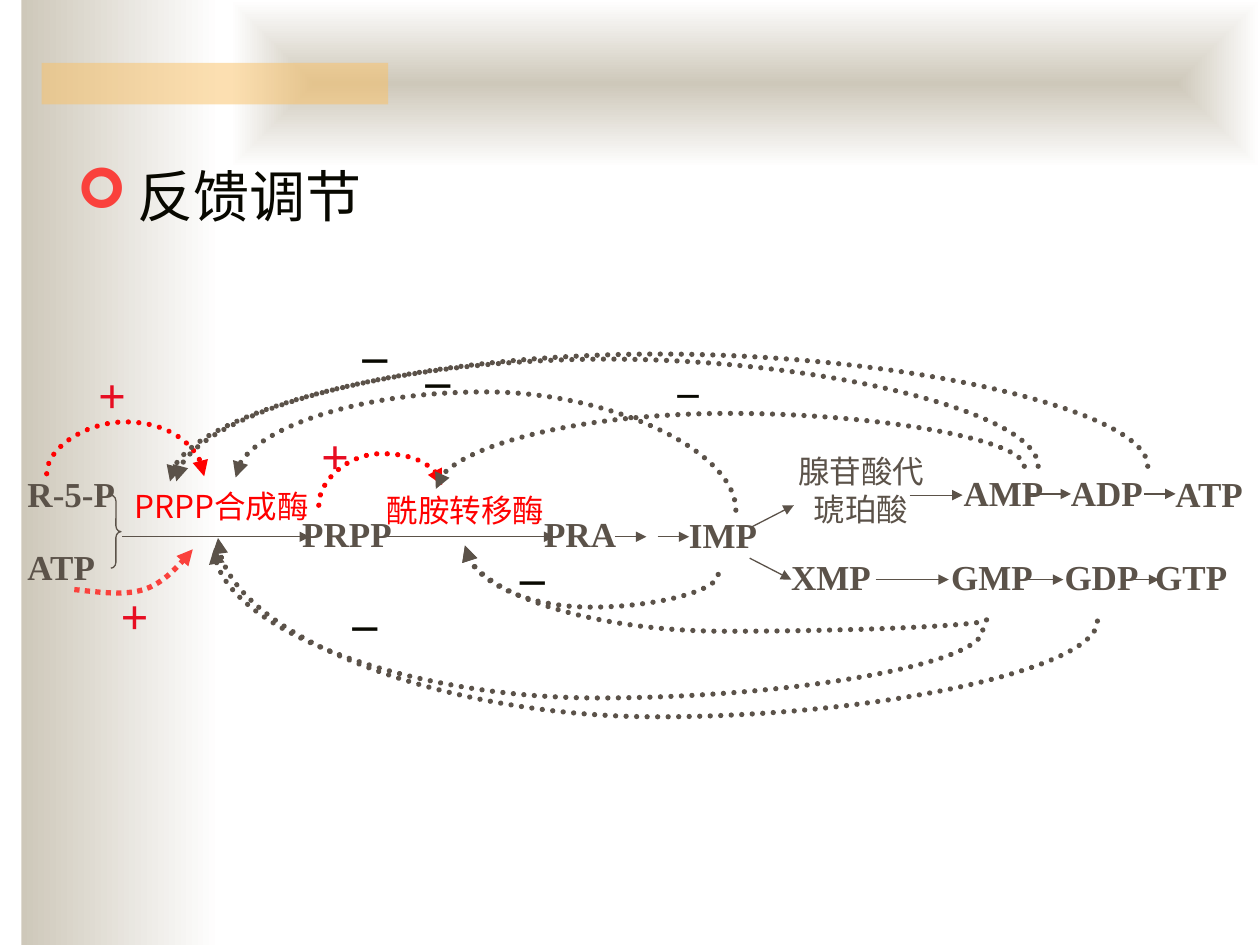
import pptx
import pptx.util
from lxml import etree
from pptx.dml.color import RGBColor
from pptx.enum.dml import MSO_LINE
from pptx.enum.shapes import MSO_CONNECTOR, MSO_SHAPE
from pptx.enum.text import MSO_ANCHOR, MSO_AUTO_SIZE, PP_ALIGN
from pptx.oxml.ns import qn
from pptx.util import Inches

BEIGE = RGBColor(0xCE, 0xC8, 0xBA)
WHITE = RGBColor(0xFF, 0xFF, 0xFF)
ORANGE = RGBColor(0xFA, 0xC1, 0x64)
BROWN = RGBColor(0x5B, 0x52, 0x49)
RED = RGBColor(0xFF, 0x00, 0x00)
SIGN_RED = RGBColor(0xE7, 0x0D, 0x22)
CORAL = RGBColor(0xFA, 0x41, 0x3C)
BLACK = RGBColor(0x08, 0x08, 0x00)
SERIF = "Times New Roman"
SANS = "Noto Sans CJK SC"


def write_text(shape, text, size, font_name, color, bold=False, wrap=False, align=PP_ALIGN.LEFT):
    frame = shape.text_frame
    frame.text = text
    frame.word_wrap = wrap
    frame.auto_size = MSO_AUTO_SIZE.SHAPE_TO_FIT_TEXT
    frame.vertical_anchor = MSO_ANCHOR.TOP
    for paragraph in frame.paragraphs:
        paragraph.alignment = align
        for run in paragraph.runs:
            run.font.size = pptx.util.Pt(size)
            run.font.bold = bold
            run.font.color.rgb = color
            run.font.name = font_name
            east_asian = etree.SubElement(run.font._element, qn("a:ea"))
            east_asian.set("typeface", font_name)


def style_arrow(shape, color, width, dotted=False, round_cap=False):
    """Set the line, its arrowhead and an empty effect list."""
    shape.line.color.rgb = color
    shape.line.width = pptx.util.Pt(width)
    if dotted:
        shape.line.dash_style = MSO_LINE.ROUND_DOT
    properties = shape._element.spPr
    line = properties.find(qn("a:ln"))
    if round_cap:
        line.set("cap", "rnd")
    etree.SubElement(line, qn("a:tailEnd")).set("type", "triangle")
    if properties.find(qn("a:effectLst")) is None:
        etree.SubElement(properties, qn("a:effectLst"))


presentation = pptx.Presentation()
presentation.slide_width = Inches(10)
presentation.slide_height = Inches(7.5)
slide = presentation.slides.add_slide(presentation.slide_layouts[5])
shapes = slide.shapes

# Background bands
bands = []
for left, top, width, height in [(0.17, 0, 1.58, 7.5), (1.83, 0, 8.17, 1.33), (0.33, 0.5, 2.75, 0.33)]:
    band = shapes.add_shape(MSO_SHAPE.RECTANGLE, Inches(left), Inches(top), Inches(width), Inches(height))
    band.shadow.inherit = False
    band.line.fill.background()
    bands.append(band)
side_band, top_band, accent_bar = bands
for band in (side_band, top_band):
    band.fill.gradient()
    band.fill.gradient_angle = 0
    for stop, color, position in zip(band.fill.gradient_stops, (BEIGE, WHITE), (0, 1)):
        stop.color.rgb = color
        stop.position = position
gradient = top_band._element.spPr.find(qn("a:gradFill"))
gradient.remove(gradient.find(qn("a:lin")))
shade = etree.SubElement(gradient, qn("a:path"))
shade.set("path", "shape")
center = etree.SubElement(shade, qn("a:fillToRect"))
for side in "ltrb":
    center.set(side, "50000")
accent_bar.fill.solid()
accent_bar.fill.fore_color.rgb = ORANGE
accent_color = accent_bar._element.spPr.find(qn("a:solidFill"))[0]
etree.SubElement(accent_color, qn("a:alpha")).set("val", "50000")

# Title, brought in front of the bands
title = shapes.title
title.left, title.top, title.width, title.height = Inches(0.51), Inches(1.23), Inches(2.68), Inches(0.63)
write_text(title, "反馈调节", 32, SANS, BLACK, wrap=True)
bullet_properties = title.text_frame.paragraphs[0]._p.get_or_add_pPr()
bullet_properties.set("marL", str(Inches(0.48)))
bullet_properties.set("indent", str(-Inches(0.48)))
bullet_color = etree.SubElement(bullet_properties, qn("a:buClr"))
etree.SubElement(bullet_color, qn("a:srgbClr")).set("val", str(CORAL))
etree.SubElement(bullet_properties, qn("a:buFont")).set("typeface", "Wingdings")
etree.SubElement(bullet_properties, qn("a:buChar")).set("char", "➢")
shapes._spTree.append(title._element)

# Metabolites
for name, left, top, width in [
    ("R-5-P", 0.12, 3.7, 0.9), ("ATP", 0.12, 4.28, 0.76),
    ("PRPP", 2.3, 4.02, 0.91), ("PRA", 4.22, 4.02, 0.77), ("IMP", 5.37, 4.03, 0.74),
    ("AMP", 7.55, 3.69, 0.87), ("ADP", 8.4, 3.69, 0.77), ("ATP", 9.23, 3.7, 0.76),
    ("XMP", 6.18, 4.36, 0.84), ("GMP", 7.45, 4.36, 0.85), ("GDP", 8.35, 4.36, 0.79), ("GTP", 9.07, 4.36, 0.77),
]:
    box = shapes.add_textbox(Inches(left), Inches(top), Inches(width), Inches(0.43))
    write_text(box, name, 20, SERIF, BROWN, bold=True)

# Enzymes and the adenylosuccinate intermediate
for name, left, top, width, height, color, align in [
    ("PRPP合成酶", 0.97, 3.82, 1.67, 0.4, RED, PP_ALIGN.LEFT),
    ("酰胺转移酶", 2.97, 3.85, 1.56, 0.4, RED, PP_ALIGN.LEFT),
    ("腺苷酸代\n琥珀酸", 6.22, 3.54, 1.23, 0.7, BROWN, PP_ALIGN.CENTER),
]:
    box = shapes.add_textbox(Inches(left), Inches(top), Inches(width), Inches(height))
    write_text(box, name, 18, SANS, color, wrap=True, align=align)

brace = shapes.add_shape(MSO_SHAPE.RIGHT_BRACE, Inches(0.88), Inches(3.93), Inches(0.08), Inches(0.58))
brace.adjustments[0] = 0.583
brace.shadow.inherit = False
brace.fill.background()
brace.line.color.rgb = BROWN
brace.line.width = pptx.util.Pt(0.75)

# Reaction arrows
for start_x, start_y, end_x, end_y in [
    (0.97, 4.26, 2.46, 4.26), (3.06, 4.26, 4.4, 4.26), (4.88, 4.26, 5.13, 4.26), (5.22, 4.26, 5.47, 4.26),
    (5.97, 4.18, 6.3, 4.01), (7.22, 3.93, 7.64, 3.93), (8.16, 3.92, 8.5, 3.92), (9.08, 3.92, 9.33, 3.92),
    (5.95, 4.43, 6.28, 4.6), (6.95, 4.6, 7.53, 4.6), (8.12, 4.6, 8.44, 4.6), (8.95, 4.6, 9.2, 4.6),
]:
    arrow = shapes.add_connector(
        MSO_CONNECTOR.STRAIGHT, Inches(start_x), Inches(start_y), Inches(end_x), Inches(end_y))
    style_arrow(arrow, BROWN, 0.75)

# Feedback curves: each leaves vertically, runs to bend_y and returns to its end
for start_x, start_y, end_x, end_y, bend_y, color in [
    (0.37, 3.76, 1.62, 3.78, 3.35, RED), (2.53, 4.01, 3.51, 3.85, 3.6, RED),
    (7.83, 4.92, 3.69, 4.33, 5.01, BROWN), (8.71, 4.93, 1.73, 4.27, 5.69, BROWN),
    (9.11, 3.7, 1.35, 3.82, 2.81, BROWN), (8.13, 3.7, 3.46, 3.88, 3.28, BROWN),
    (8.24, 3.7, 1.4, 3.82, 2.85, BROWN), (5.84, 4.05, 1.87, 3.79, 3.11, BROWN),
    (5.7, 4.56, 3.69, 4.33, 4.82, BROWN), (7.8, 5, 1.7, 4.35, 5.54, BROWN),
]:
    # The frame is turned by 270 degrees, so width and height change places
    width, height = abs(end_y - start_y), abs(end_x - start_x)
    left, top = (start_x + end_x - width) / 2, (start_y + end_y - height) / 2
    curve = shapes.add_connector(
        MSO_CONNECTOR.CURVE, Inches(left), Inches(top), Inches(left + width), Inches(top + height))
    frame = curve._element.spPr.find(qn("a:xfrm"))
    frame.set("rot", str(270 * 60000))
    if end_y > start_y:
        frame.set("flipH", "1")
    if end_x < start_x:
        frame.set("flipV", "1")
    geometry = curve._element.spPr.find(qn("a:prstGeom"))
    guide = etree.SubElement(geometry.find(qn("a:avLst")), qn("a:gd"))
    guide.set("name", "adj1")
    guide.set("fmla", f"val {round((bend_y - start_y) / (end_y - start_y) * 100000)}")
    style_arrow(curve, color, 3, dotted=True, round_cap=True)

# Activation of PRPP synthetase by ATP, sampled from two cubic curves
points = []
for cubic in [
    ((0.59, 4.68), (0.79, 4.7), (0.98, 4.73), (1.14, 4.68)),
    ((1.14, 4.68), (1.3, 4.63), (1.42, 4.49), (1.53, 4.36)),
]:
    for step in range(1, 13):
        t = step / 12
        weights = ((1 - t) ** 3, 3 * t * (1 - t) ** 2, 3 * t * t * (1 - t), t ** 3)
        points.append(tuple(Inches(sum(w * p[axis] for w, p in zip(weights, cubic))) for axis in (0, 1)))
builder = shapes.build_freeform(Inches(0.59), Inches(4.68))
builder.add_line_segments(points, close=False)
activation = builder.convert_to_shape()
activation.shadow.inherit = False
activation.fill.background()
style_arrow(activation, CORAL, 3, dotted=True)

# Plus and minus signs
for sign, left, top, width, height, size, color in [
    ("+", 2.45, 3.33, 0.42, 0.57, 28, SIGN_RED), ("+", 0.68, 2.84, 0.42, 0.57, 28, SIGN_RED),
    ("+", 0.86, 4.6, 0.42, 0.57, 28, SIGN_RED),
    ("_", 2.78, 2.39, 0.4, 0.57, 28, BLACK), ("_", 3.28, 2.59, 0.4, 0.57, 28, BLACK),
    ("_", 5.28, 2.73, 0.37, 0.5, 24, BLACK), ("_", 2.7, 4.52, 0.4, 0.57, 28, BLACK),
    ("_", 4.03, 4.15, 0.4, 0.57, 28, BLACK),
]:
    box = shapes.add_textbox(Inches(left), Inches(top), Inches(width), Inches(height))
    write_text(box, sign, size, SERIF, color, bold=True)

presentation.save("out.pptx")
